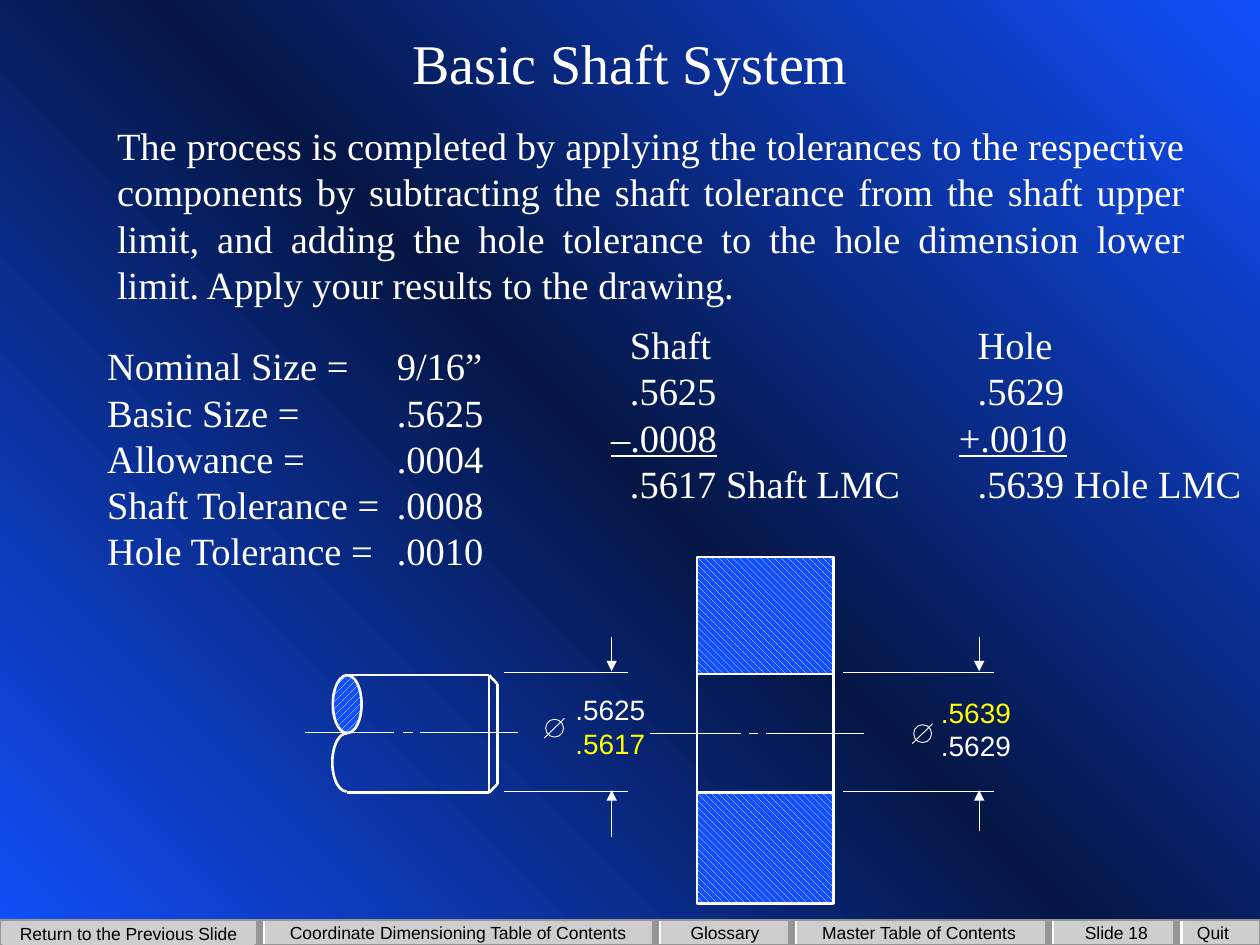
from dataclasses import dataclass
from math import cos, pi, sin
from typing import NamedTuple

from lxml.etree import SubElement
from pptx import Presentation
from pptx.dml.color import RGBColor
from pptx.enum.dml import MSO_PATTERN as Pattern
from pptx.enum.shapes import MSO_CONNECTOR as Connector, MSO_SHAPE as Preset
from pptx.enum.text import MSO_ANCHOR as Anchor, PP_ALIGN as Align
from pptx.oxml import parse_xml
from pptx.oxml.ns import nsdecls, qn
from pptx.util import Cm, Pt

WHITE, BLACK, YELLOW = "FFFFFF", "000000", "FFFF00"
BLUE, NAVY, SILVER, GRAY = "114FFB", "051645", "CECECE", "969696"
OUTLINE, THIN, HAIRLINE = 1.5, 0.5, 0.25


class Box(NamedTuple):
    left: float
    top: float
    width: float
    height: float


class Stroke(NamedTuple):
    x1: float
    y1: float
    x2: float
    y2: float
    weight: float = OUTLINE
    color: str = WHITE
    arrow: bool = False


class Span(NamedTuple):
    text: str
    style: dict = {}


class Line(NamedTuple):
    spans: list[Span]
    tabs: tuple[float, ...] = ()


@dataclass
class TextBlock:
    box: Box
    lines: list[Line]
    size: float = 22
    font: str = "Times New Roman"
    color: str = WHITE
    align: Align = Align.LEFT
    anchor: Anchor = Anchor.TOP
    wrap: bool = True
    fill: str | None = None


def rgb(value: str) -> RGBColor:
    return RGBColor.from_string(value)


def plain(text: str, *tabs: float, **style) -> Line:
    return Line([Span(text, style)], tabs)


def paint_background(slide) -> None:
    stops = "".join(
        f'<a:gs pos="{position}"><a:srgbClr val="{color}"/></a:gs>'
        for position, color in ((0, BLUE), (50000, NAVY), (100000, BLUE)))
    slide.element.cSld.insert(0, parse_xml(
        f'<p:bg {nsdecls("p", "a")}><p:bgPr><a:gradFill rotWithShape="0"><a:gsLst>{stops}</a:gsLst>'
        '<a:lin ang="18900000" scaled="0"/></a:gradFill><a:effectLst/></p:bgPr></p:bg>'))


def draw_shape(slide, preset: Preset, box: Box, fill: str | None = None,
               line: str | None = WHITE, weight: float = OUTLINE):
    shape = slide.shapes.add_shape(preset, *map(Cm, box))
    style_shape(shape, fill, line, weight)
    return shape


def style_shape(shape, fill: str | None, line: str | None, weight: float) -> None:
    shape.shadow.inherit = False
    if fill:
        shape.fill.solid()
        shape.fill.fore_color.rgb = rgb(fill)
    else:
        shape.fill.background()
    if line:
        shape.line.color.rgb = rgb(line)
        shape.line.width = Pt(weight)
    else:
        shape.line.fill.background()


def hatch(shape, pattern: Pattern) -> None:
    shape.fill.patterned()
    shape.fill.pattern = pattern
    shape.fill.fore_color.rgb = rgb(WHITE)
    shape.fill.back_color.rgb = rgb(BLUE)


def draw_stroke(slide, stroke: Stroke) -> None:
    connector = slide.shapes.add_connector(Connector.STRAIGHT, *map(Cm, stroke[:4]))
    connector.line.color.rgb = rgb(stroke.color)
    connector.line.width = Pt(stroke.weight)
    if stroke.arrow:
        SubElement(connector.line._get_or_add_ln(), qn("a:headEnd"), type="triangle")
    SubElement(connector._element.spPr, qn("a:effectLst"))


def draw_text(slide, block: TextBlock) -> None:
    if block.fill:
        shape = draw_shape(slide, Preset.RECTANGLE, block.box, block.fill, None)
    else:
        shape = slide.shapes.add_textbox(*map(Cm, block.box))
    frame = shape.text_frame
    frame.word_wrap = block.wrap
    frame.vertical_anchor = block.anchor
    for index, line in enumerate(block.lines):
        paragraph = frame.add_paragraph() if index else frame.paragraphs[0]
        paragraph.alignment = block.align
        if line.tabs:
            tab_list = SubElement(paragraph._p.get_or_add_pPr(), qn("a:tabLst"))
            for tab in line.tabs:
                SubElement(tab_list, qn("a:tab"), pos=str(Cm(tab)), algn="l")
        for span in line.spans:
            run = paragraph.add_run()
            run.text = span.text
            style = {"size": Pt(block.size), "name": block.font, "color": block.color} | span.style
            color = style.pop("color")
            for name, value in style.items():
                setattr(run.font, name, value)
            run.font.color.rgb = rgb(color)


def draw_navigation(slide) -> None:
    draw_shape(slide, Preset.RECTANGLE, Box(0, 18.54, 25.4, 0.51), SILVER, GRAY, 1.25)
    for x in (5.28, 13.26, 16, 21.18, 23.77):
        for edge, color in ((x, WHITE), (x - 0.05, GRAY)):
            draw_stroke(slide, Stroke(edge, 19.02, edge, 18.57, 4, color))
    for label, left, top, width, fill in (
            ("Return to the Previous Slide", 0.05, 18.59, 5.08, SILVER),
            ("Coordinate Dimensioning Table of Contents", 5.38, 18.57, 7.7, SILVER),
            ("Glossary", 13.36, 18.57, 2.51, SILVER),
            ("Master Table of Contents", 16.43, 18.57, 4.19, SILVER),
            ("Slide 18", 21.62, 18.57, 1.91, None),
            ("Quit", 23.88, 18.57, 1.27, None)):
        draw_text(slide, TextBlock(
            Box(left, top, width, 0.46), [plain(label)], 10, "Arial", BLACK,
            Align.CENTER if fill else Align.LEFT, Anchor.MIDDLE, False, fill))


def draw_center_line(slide, y: float, *dashes: tuple[float, float]) -> None:
    for start, end in dashes:
        draw_stroke(slide, Stroke(start, y, end, y, THIN))


def draw_shaft(slide) -> None:
    x, radius_x, radius_y, middle = 6.99, 0.29, 0.585, 15.37
    angles = [pi / 2 + pi * step / 24 for step in range(25)]
    points = [(Cm(x + radius_x * cos(a)), Cm(middle + radius_y * sin(a))) for a in angles]
    builder = slide.shapes.build_freeform(*points[0])
    builder.add_line_segments(points[1:], close=False)
    style_shape(builder.convert_to_shape(), None, WHITE, OUTLINE)
    hatch(draw_shape(slide, Preset.OVAL, Box(6.71, 13.61, 0.58, 1.17)), Pattern.WIDE_UPWARD_DIAGONAL)
    top, bottom, end, tip, chamfer = 13.61, 15.98, 9.86, 10.03, 0.18
    for ends in ((x, top, end, top), (x, bottom, end, bottom), (end, top, end, bottom),
                 (end, top, tip, top + chamfer), (tip, top + chamfer, tip, bottom - chamfer),
                 (end, bottom, tip, bottom - chamfer)):
        draw_stroke(slide, Stroke(*ends))
    draw_center_line(slide, 14.76, (6.15, 7.95), (8.13, 8.33), (8.46, 10.44))


def draw_hole(slide) -> None:
    left, right, top, bottom = 14.05, 16.8, 11.23, 18.21
    for x in (left, right):
        draw_stroke(slide, Stroke(x, top, x, bottom))
    for y in (top, 13.59, 15.98, bottom):
        draw_stroke(slide, Stroke(left, y, right, y))
    draw_center_line(slide, 14.78, (13.11, 14.94), (15.09, 15.29), (15.44, 17.42))
    for y, height in ((top, 2.36), (15.98, 2.23)):
        section = draw_shape(slide, Preset.RECTANGLE, Box(left, y, right - left, height))
        hatch(section, Pattern.WIDE_DOWNWARD_DIAGONAL)


def draw_dimension(slide, start: float, end: float, arrow_x: float, arrow_end: float,
                   symbol: tuple[float, float], label: tuple[float, float], limits: list[Line]) -> None:
    for y, tip, tail in ((13.56, 13.53, 12.84), (15.95, 15.93, arrow_end)):
        draw_stroke(slide, Stroke(start, y, end, y, HAIRLINE))
        draw_stroke(slide, Stroke(arrow_x, tip, arrow_x, tail, HAIRLINE, arrow=True))
    x, y = symbol
    draw_shape(slide, Preset.OVAL, Box(x, y, 0.36, 0.36), weight=THIN)
    draw_stroke(slide, Stroke(x + 0.38, y - 0.02, x - 0.03, y + 0.38, THIN))
    draw_text(slide, TextBlock(Box(*label, 1.93, 1.63), limits, 16, "Arial", wrap=False))


def main() -> None:
    """Build the basic shaft system slide."""
    presentation = Presentation()
    presentation.slide_width, presentation.slide_height = Cm(25.4), Cm(19.05)
    slide = presentation.slides.add_slide(presentation.slide_layouts[6])
    paint_background(slide)
    draw_navigation(slide)
    draw_text(slide, TextBlock(Box(1.91, 0.2, 21.59, 2.11), [plain("Basic Shaft System")], 32,
                               align=Align.CENTER, anchor=Anchor.MIDDLE))
    draw_text(slide, TextBlock(Box(2.11, 2.34, 22.02, 4.24), [plain(
        "The process is completed by applying the tolerances to the respective components by "
        "subtracting the shaft tolerance from the shaft upper limit, and adding the hole tolerance "
        "to the hole dimension lower limit. Apply your results to the drawing.")], align=Align.JUSTIFY))
    sizes = (("Nominal Size =", "9/16”"), ("Basic Size =", ".5625"), ("Allowance =", ".0004"),
             ("Shaft Tolerance =", ".0008"), ("Hole Tolerance =", ".0010"))
    draw_text(slide, TextBlock(Box(1.91, 6.78, 8.36, 4.95),
                               [plain(f"{name}\t{value}", 5.84) for name, value in sizes]))
    draw_shaft(slide)
    draw_hole(slide)
    draw_dimension(slide, 10.15, 12.66, 12.33, 16.87, (11, 14.5), (11.35, 13.84),
                   [plain(".5625"), plain(".5617", color=YELLOW)])
    draw_dimension(slide, 17, 20.03, 19.74, 16.76, (18.42, 14.61), (18.72, 13.89),
                   [plain(".5639", color=YELLOW), plain(".5629")])
    columns = (0.38, 7.39)
    underlined = {"underline": True}
    draw_text(slide, TextBlock(Box(12.07, 6.35, 13.33, 4.01), [
        plain("\tShaft\tHole", *columns),
        plain("\t.5625\t.5629", *columns),
        Line([Span("–.0008", underlined), Span("\t"), Span("+.0010", underlined)], (7.01,)),
        plain("\t.5617 Shaft LMC\t.5639 Hole LMC", *columns)]))
    presentation.save("out.pptx")


if __name__ == "__main__":
    main()
